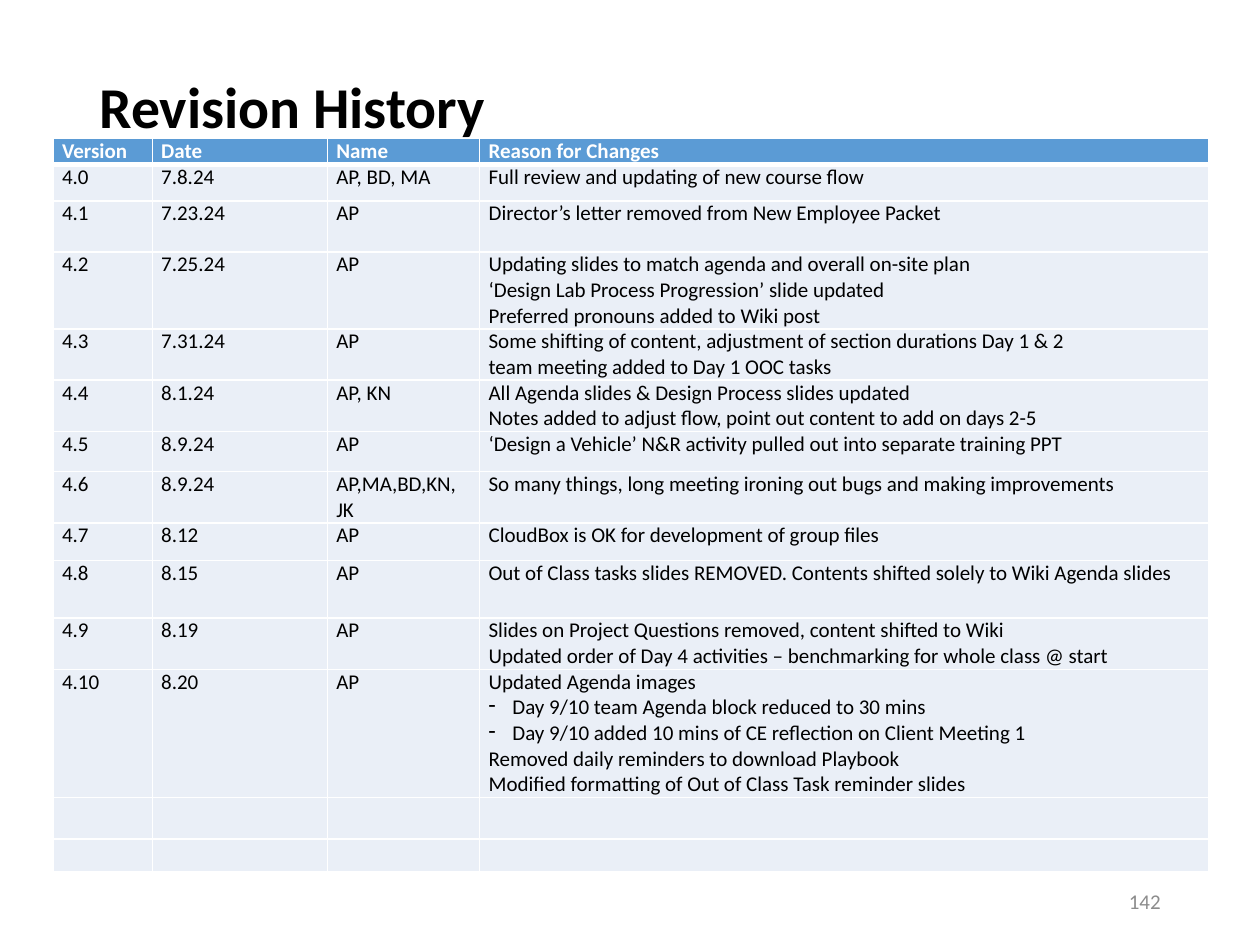
from lxml import etree
from pptx import Presentation
from pptx.enum import text as t
from pptx.dml.color import RGBColor
from pptx.oxml import ns
from pptx.util import Cm, Pt

HUES = {"head": "5B9BD5", "row": "EAEFF7", "line": "FFFFFF",
        "ink": "000000", "pale": "FFFFFF", "page": "8C8C8C"}

WIDTHS = [2, 3.53, 3.07, 14.7]
HEADS = ["Version", "Date", "Name", "Reason for Changes"]

# Row height in cm, version, date, name, reasons ("- " starts a bullet)
LOG = [
    (0.74, "4.0", "7.8.24", "AP, BD, MA", ["Full review and updating of new course flow"]),
    (1.03, "4.1", "7.23.24", "AP", ["Director’s letter removed from New Employee Packet"]),
    (1.55, "4.2", "7.25.24", "AP", [
        "Updating slides to match agenda and overall on-site plan",
        "‘Design Lab Process Progression’ slide updated",
        "Preferred pronouns added to Wiki post"]),
    (1.03, "4.3", "7.31.24", "AP", [
        "Some shifting of content, adjustment of section durations Day 1 & 2",
        "team meeting added to Day 1 OOC tasks"]),
    (1.03, "4.4", "8.1.24", "AP, KN", [
        "All Agenda slides & Design Process slides updated",
        "Notes added to adjust flow, point out content to add on days 2-5"]),
    (0.81, "4.5", "8.9.24", "AP", [
        "‘Design a Vehicle’ N&R activity pulled out into separate training PPT"]),
    (1.03, "4.6", "8.9.24", "AP,MA,BD,KN, JK", [
        "So many things, long meeting ironing out bugs and making improvements"]),
    (0.76, "4.7", "8.12", "AP", ["CloudBox is OK for development of group files"]),
    (1.16, "4.8", "8.15", "AP", [
        "Out of Class tasks slides REMOVED. Contents shifted solely to Wiki Agenda slides"]),
    (1.03, "4.9", "8.19", "AP", [
        "Slides on Project Questions removed, content shifted to Wiki",
        "Updated order of Day 4 activities – benchmarking for whole class @ start"]),
    (2.58, "4.10", "8.20", "AP", [
        "Updated Agenda images",
        "- Day 9/10 team Agenda block reduced to 30 mins",
        "- Day 9/10 added 10 mins of CE reflection on Client Meeting 1",
        "Removed daily reminders to download Playbook",
        "Modified formatting of Out of Class Task reminder slides"]),
    (0.84, "", "", "", [""]),
    (0.66, "", "", "", [""]),
]


def write(frame, lines, size=12, hue="ink", bold=False, align=t.PP_ALIGN.LEFT, space=1.0):
    """Fill a text frame, one paragraph a line."""
    for i, line in enumerate(lines):
        para = frame.paragraphs[0] if i == 0 else frame.add_paragraph()
        para.alignment, para.line_spacing = align, space
        if not line:  # an empty cell still needs its text size
            end = etree.SubElement(para._p, ns.qn("a:endParaRPr"))
            end.set("sz", str(size * 100))
            continue
        if line.startswith("- "):
            line = line[2:]
            props = para._p.get_or_add_pPr()
            props.set("marL", str(Cm(0.48)))
            props.set("indent", str(-Cm(0.48)))
            etree.SubElement(props, ns.qn("a:buChar")).set("char", "-")
        run = para.add_run()
        run.text = line
        font = run.font
        font.name, font.size, font.bold = "Calibri", Pt(size), bold
        font.color.rgb = RGBColor.from_string(HUES[hue])


class Deck:
    def __init__(self):
        self.prs = Presentation()
        self.prs.slide_width, self.prs.slide_height = Cm(25.4), Cm(19.05)
        self.slide = self.prs.slides.add_slide(self.prs.slide_layouts[5])

    def title(self, words, x, y, w, h):
        box = self.slide.shapes.title
        box.left, box.top, box.width, box.height = Cm(x), Cm(y), Cm(w), Cm(h)
        frame = box.text_frame
        frame.auto_size = t.MSO_AUTO_SIZE.NONE
        frame.vertical_anchor = t.MSO_ANCHOR.TOP
        frame.margin_top = Cm(0.56)
        write(frame, [words], size=33, bold=True, space=0.9)

    def label(self, words, x, y, w, h, **style):
        frame = self.slide.shapes.add_textbox(Cm(x), Cm(y), Cm(w), Cm(h)).text_frame
        frame.word_wrap = True
        frame.vertical_anchor = t.MSO_ANCHOR.MIDDLE
        write(frame, [words], **style)

    def edge(self, cell, **sides):
        props = cell._tc.get_or_add_tcPr()
        for side in "LRTB":
            line = etree.SubElement(props, ns.qn("a:ln" + side))
            line.set("w", str(Pt(sides.get(side, 1))))
            fill = etree.SubElement(line, ns.qn("a:solidFill"))
            etree.SubElement(fill, ns.qn("a:srgbClr")).set("val", HUES["line"])

    def cell(self, cell, lines, fill, sides, **style):
        cell.margin_left = cell.margin_right = Cm(0.18)
        cell.margin_top = cell.margin_bottom = 0
        self.edge(cell, **sides)
        cell.fill.solid()
        cell.fill.fore_color.rgb = RGBColor.from_string(HUES[fill])
        write(cell.text_frame, lines, **style)

    def table(self, x, y, widths, heads, rows, top):
        high = top + sum(row[0] for row in rows)
        grid = self.slide.shapes.add_table(
            len(rows) + 1, len(widths), Cm(x), Cm(y), Cm(sum(widths)), Cm(high)).table
        for col, wide in zip(grid.columns, widths):
            col.width = Cm(wide)
        # Header
        grid.rows[0].height = Cm(top)
        for c, head in enumerate(heads):
            self.cell(grid.cell(0, c), [head], "head", {"B": 3}, hue="pale", bold=True)
        # Entries
        for r, (tall, *short, why) in enumerate(rows, 1):
            grid.rows[r].height = Cm(tall)
            sides = {"T": 3} if r == 1 else {}
            for c, lines in enumerate([[s] for s in short] + [why]):
                self.cell(grid.cell(r, c), lines, "row", sides)


def main():
    deck = Deck()
    deck.title("Revision History", 1.75, 1.02, 21.9, 3.68)
    deck.table(1.07, 2.79, WIDTHS, HEADS, LOG, top=0.52)
    # Page number
    deck.label("142", 17.93, 17.65, 5.72, 1.02, hue="page", align=t.PP_ALIGN.RIGHT)
    deck.prs.save("out.pptx")


if __name__ == "__main__":
    main()
